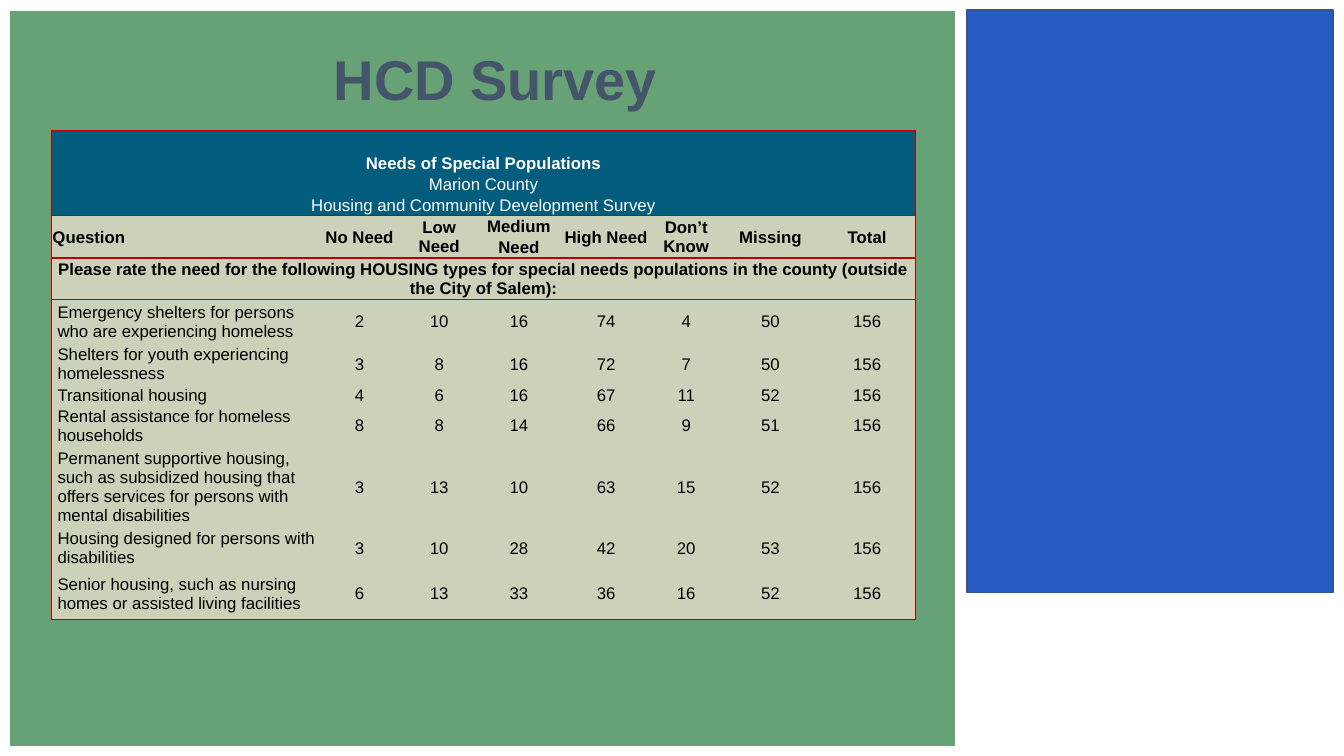
"""Build the HCD Survey slide with its table of special population needs."""
import dataclasses

import pptx
import pptx.dml.color
import pptx.enum.shapes
import pptx.enum.text
import pptx.oxml
import pptx.oxml.ns
import pptx.util
from lxml import etree

ALIGN = pptx.enum.text.PP_ALIGN
MIDDLE = pptx.enum.text.MSO_ANCHOR.MIDDLE


@dataclasses.dataclass(frozen=True)
class Theme:
    font: str = "Arial"
    title_size: int = 40
    table_size: int = 12
    line_width: int = 1
    title: str = "44546A"
    green: str = "67A176"
    blue: str = "285BC2"
    blue_edge: str = "325491"
    white: str = "FFFFFF"
    black: str = "000000"
    heading: str = "025C7E"
    body: str = "CCD1B9"
    rule: str = "BB0000"


THEME = Theme()
WIDTH = pptx.util.Inches(13.33)
HEIGHT = pptx.util.Inches(7.5)

HEADINGS = [
    "",
    "Needs of Special Populations",
    "Marion County",
    "Housing and Community Development Survey",
]
COLUMNS = ["Question", "No Need", "Low Need", "Medium", "High Need",
           "Don’t Know", "Missing", "Total"]
PROMPT = ("Please rate the need for the following HOUSING types for special needs "
          "populations in the county (outside the City of Salem):")
ANSWERS = [
    ("Emergency shelters for persons who are experiencing homeless", 2, 10, 16, 74, 4, 50, 156),
    ("Shelters for youth experiencing homelessness", 3, 8, 16, 72, 7, 50, 156),
    ("Transitional housing", 4, 6, 16, 67, 11, 52, 156),
    ("Rental assistance for homeless households", 8, 8, 14, 66, 9, 51, 156),
    ("Permanent supportive housing, such as subsidized housing that offers services "
     "for persons with mental disabilities", 3, 13, 10, 63, 15, 52, 156),
    ("Housing designed for persons with disabilities", 3, 10, 28, 42, 20, 53, 156),
    ("Senior housing, such as nursing homes or assisted living facilities",
     6, 13, 33, 36, 16, 52, 156),
]
SPLIT_COLUMN = COLUMNS.index("Medium")
COLUMN_ROW = len(HEADINGS)
PROMPT_ROW = COLUMN_ROW + 2
FIRST_ANSWER = PROMPT_ROW + 1
LAST_ROW = PROMPT_ROW + len(ANSWERS)
BLOCK_STARTS = {0, COLUMN_ROW, PROMPT_ROW, FIRST_ANSWER}
BLOCK_ENDS = {COLUMN_ROW - 1, PROMPT_ROW - 1, PROMPT_ROW, LAST_ROW}
COLUMN_SHARES = [19.73, 6.38, 5.48, 6.38, 6.6, 5.33, 7.2, 7.2]
ROW_SHARES = [2.67] + [2.8] * 5 + [5.47, 5.87, 5.33, 2.8, 5.33, 10.93, 5.2, 6.93]


def across(percent):
    return round(WIDTH * percent / 100)


def down(percent):
    return round(HEIGHT * percent / 100)


def box(left, top, width, height):
    return across(left), down(top), across(width), down(height)


def rgb(value):
    return pptx.dml.color.RGBColor.from_string(value)


def format_runs(p, size, color, bold):
    for r in p.runs:
        r.font.name = THEME.font
        r.font.size = pptx.util.Pt(size)
        r.font.bold = bold
        r.font.color.rgb = rgb(color)


def add_panel(s, area, fill, edge):
    sp = s.shapes.add_shape(pptx.enum.shapes.MSO_SHAPE.RECTANGLE, *area)
    sp.shadow.inherit = False
    sp.fill.solid()
    sp.fill.fore_color.rgb = rgb(fill)
    sp.line.color.rgb = rgb(edge)
    sp.line.width = pptx.util.Pt(THEME.line_width)


def set_title(s, text, area):
    sp = s.shapes.title
    sp.left, sp.top, sp.width, sp.height = area
    sp._element.getparent().append(sp._element)
    tf = sp.text_frame
    tf.text = text
    tf.vertical_anchor = MIDDLE
    p = tf.paragraphs[0]
    p.alignment = ALIGN.CENTER
    format_runs(p, THEME.title_size, THEME.title, True)


def set_borders(cell, ruled):
    props = cell._tc.get_or_add_tcPr()
    for side in "LRTB":
        ln = etree.SubElement(props, pptx.oxml.ns.qn(f"a:ln{side}"))
        if side in ruled:
            ln.set("w", str(pptx.util.Pt(THEME.line_width)))
            fill = etree.SubElement(ln, pptx.oxml.ns.qn("a:solidFill"))
            etree.SubElement(fill, pptx.oxml.ns.qn("a:srgbClr"), val=THEME.rule)
        else:
            etree.SubElement(ln, pptx.oxml.ns.qn("a:noFill"))


def ruled_sides(row, column, cell):
    last_row = row + cell.span_height - 1 if cell.is_merge_origin else row
    last_column = column + cell.span_width - 1 if cell.is_merge_origin else column
    tests = {
        "L": column == 0,
        "R": last_column == len(COLUMNS) - 1,
        "T": row in BLOCK_STARTS,
        "B": last_row in BLOCK_ENDS,
    }
    return {side for side, ruled in tests.items() if ruled}


def style_cell(cell, row, column, text):
    in_heading = row < COLUMN_ROW
    indented = row >= FIRST_ANSWER and column == 0
    left_aligned = row >= COLUMN_ROW and row != PROMPT_ROW and column == 0
    set_borders(cell, ruled_sides(row, column, cell))
    cell.fill.solid()
    cell.fill.fore_color.rgb = rgb(THEME.heading if in_heading else THEME.body)
    cell.vertical_anchor = MIDDLE
    cell.margin_left = pptx.util.Inches(0.06 if indented else 0.01)
    cell.margin_right = cell.margin_top = pptx.util.Inches(0.01)
    cell.margin_bottom = 0
    p = cell.text_frame.paragraphs[0]
    p.text = text
    p.alignment = ALIGN.LEFT if left_aligned else ALIGN.CENTER
    bold = row == 1 or COLUMN_ROW <= row <= PROMPT_ROW
    format_runs(p, THEME.table_size, THEME.white if in_heading else THEME.black, bold)
    if not text:
        etree.SubElement(p._p, pptx.oxml.ns.qn("a:endParaRPr"), sz=str(THEME.table_size * 100))


def table_rows():
    blanks = [""] * (len(COLUMNS) - 1)
    split = ["Need" if c == SPLIT_COLUMN else "" for c in range(len(COLUMNS))]
    rows = [[text] + blanks for text in HEADINGS]
    rows += [COLUMNS, split, [PROMPT] + blanks]
    return rows + [[str(value) for value in answer] for answer in ANSWERS]


def add_survey_table(s, left, top):
    rows = table_rows()
    area = box(left, top, sum(COLUMN_SHARES), sum(ROW_SHARES))
    table = s.shapes.add_table(len(rows), len(COLUMNS), *area).table
    table.first_row = table.horz_banding = False
    for column, share in zip(table.columns, COLUMN_SHARES):
        column.width = across(share)
    for row, share in zip(table.rows, ROW_SHARES):
        row.height = down(share)
    for row in [*range(COLUMN_ROW), PROMPT_ROW]:
        table.cell(row, 0).merge(table.cell(row, len(COLUMNS) - 1))
    for column in range(len(COLUMNS)):
        if column != SPLIT_COLUMN:
            table.cell(COLUMN_ROW, column).merge(table.cell(COLUMN_ROW + 1, column))
    for row, texts in enumerate(rows):
        for column, text in enumerate(texts):
            style_cell(table.cell(row, column), row, column, text)


def main():
    prs = pptx.Presentation()
    prs.slide_width, prs.slide_height = WIDTH, HEIGHT
    s = prs.slides.add_slide(prs.slide_layouts.get_by_name("Title Only"))
    add_panel(s, box(0.68, 1.33, 70.44, 97.47), THEME.green, THEME.white)
    add_panel(s, box(71.94, 1.33, 27.23, 77.07), THEME.blue, THEME.blue_edge)
    set_title(s, "HCD Survey", box(2.1, 4.4, 69.54, 12))
    add_survey_table(s, 3.83, 17.3)
    prs.save("out.pptx")


if __name__ == "__main__":
    main()
